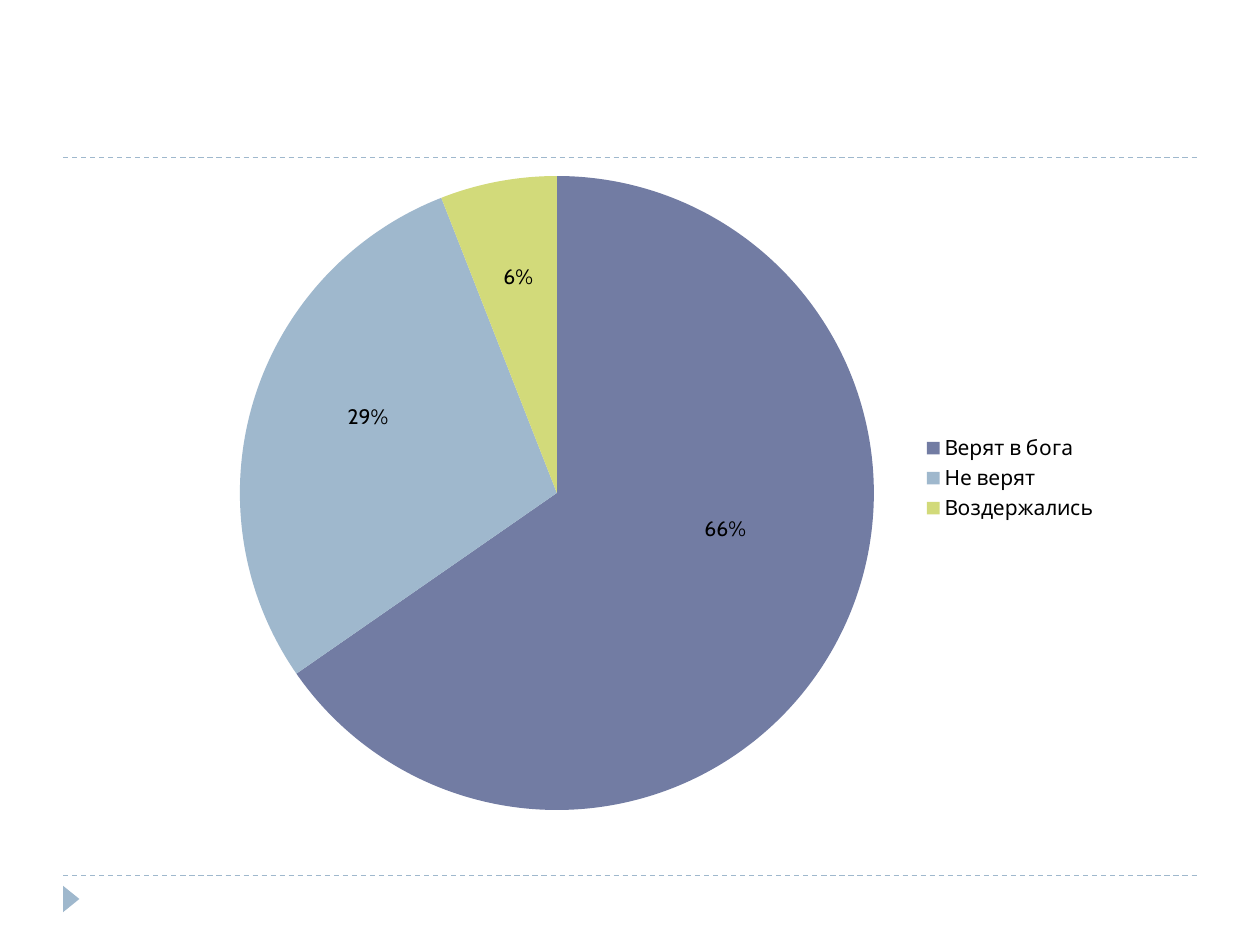
from lxml import etree
from pptx import Presentation
from pptx.chart.data import CategoryChartData
from pptx.dml.color import RGBColor
from pptx.enum.chart import XL_CHART_TYPE, XL_LABEL_POSITION, XL_LEGEND_POSITION
from pptx.enum.dml import MSO_LINE
from pptx.enum.shapes import MSO_CONNECTOR, MSO_SHAPE
from pptx.oxml.ns import qn
from pptx.util import Inches, Pt

COLORS = {"accent": "9FB8CD", "text": "000000", "believe": "727CA3",
          "disbelieve": "9FB8CD", "abstain": "D2DA7A"}
# Answer, share in percent, colour, shift of the label from the slice's centre
ANSWERS = [("Верят в бога", 66, "believe", (0.03, -0.05)),
           ("Не верят ", 29, "disbelieve", (-0.04, -0.04)),
           ("Воздержались ", 6, "abstain", (-0.01, -0.08))]
PERCENT_FORMAT = '0"%"'


def rgb(name):
    return RGBColor.from_string(COLORS[name])


def add_frame(slide, left, top, width, height):
    """Draw the dashed rules above and below the content, and the footer marker."""
    for y in (top + height, top):
        rule = slide.shapes.add_connector(
            MSO_CONNECTOR.STRAIGHT, Inches(left), Inches(y), Inches(left + width), Inches(y))
        for attribute, value in {"width": Pt(0.75), "dash_style": MSO_LINE.DASH}.items():
            setattr(rule.line, attribute, value)
        rule.line.color.rgb = rgb("accent")
        etree.SubElement(rule._element.spPr, qn("a:effectLst"))

    marker = slide.shapes.add_shape(
        MSO_SHAPE.ISOSCELES_TRIANGLE, Inches(left - 0.04), Inches(top + height + 0.12),
        Inches(0.21), Inches(0.13))
    marker.rotation = 90
    marker.shadow.inherit = False
    marker.fill.solid()
    marker.fill.fore_color.rgb = rgb("accent")
    marker.line.fill.background()


def set_layout(parent, index, **settings):
    """Give a chart part a manual layout, in fractions of the chart's box."""
    for old_layout in parent.findall(qn("c:layout")):
        parent.remove(old_layout)
    layout = etree.Element(qn("c:layout"))
    manual = etree.SubElement(layout, qn("c:manualLayout"))
    for tag, value in settings.items():
        etree.SubElement(manual, qn(f"c:{tag}")).set("val", str(value))
    parent.insert(index, layout)


def place_label(point, shift):
    point.data_label.position = XL_LABEL_POSITION.CENTER
    label = point.data_label._get_or_add_dLbl()
    set_layout(label, 1, x=shift[0], y=shift[1])
    number_format = etree.Element(qn("c:numFmt"))
    number_format.set("formatCode", PERCENT_FORMAT)
    number_format.set("sourceLinked", "0")
    label.insert(2, number_format)


def add_answers_pie(slide, left, top, width, height):
    answers = CategoryChartData()
    answers.categories = [answer for answer, *_ in ANSWERS]
    answers.add_series("Series 1", [share for _, share, *_ in ANSWERS])
    chart = slide.shapes.add_chart(
        XL_CHART_TYPE.PIE, Inches(left), Inches(top), Inches(width), Inches(height),
        answers).chart
    chart.has_title = False
    chart.has_legend = True
    chart.font.color.rgb = rgb("text")
    pie = chart.plots[0]
    pie.vary_by_categories = True
    shares = pie.series[0]

    formats = [
        (chart.font, {"name": "Cabin", "size": Pt(12)}),
        (chart.legend, {"position": XL_LEGEND_POSITION.RIGHT, "include_in_layout": False}),
        (shares.data_labels, {"show_value": True, "number_format": PERCENT_FORMAT,
                              "number_format_is_linked": False,
                              "position": XL_LABEL_POSITION.CENTER}),
    ]
    for part, values in formats:
        for attribute, value in values.items():
            setattr(part, attribute, value)

    for index, (_, _, color, label_shift) in enumerate(ANSWERS):
        point = shares.points[index]
        point.format.fill.solid()
        point.format.fill.fore_color.rgb = rgb(color)
        point.format.line.fill.background()
        place_label(point, label_shift)
    set_layout(chart._chartSpace.chart.plotArea, 0, layoutTarget="inner",
               xMode="edge", yMode="edge", x=0.06, y=0.09, w=0.68, h=0.86)


def main():
    deck = Presentation()
    deck.slide_width, deck.slide_height = Inches(10), Inches(7.5)
    slide = deck.slides.add_slide(deck.slide_layouts[6])
    add_frame(slide, 0.5, 1.25, 9, 5.7)
    add_answers_pie(slide, 1.46, 0.84, 7.4, 5.91)
    deck.save("out.pptx")


if __name__ == "__main__":
    main()
